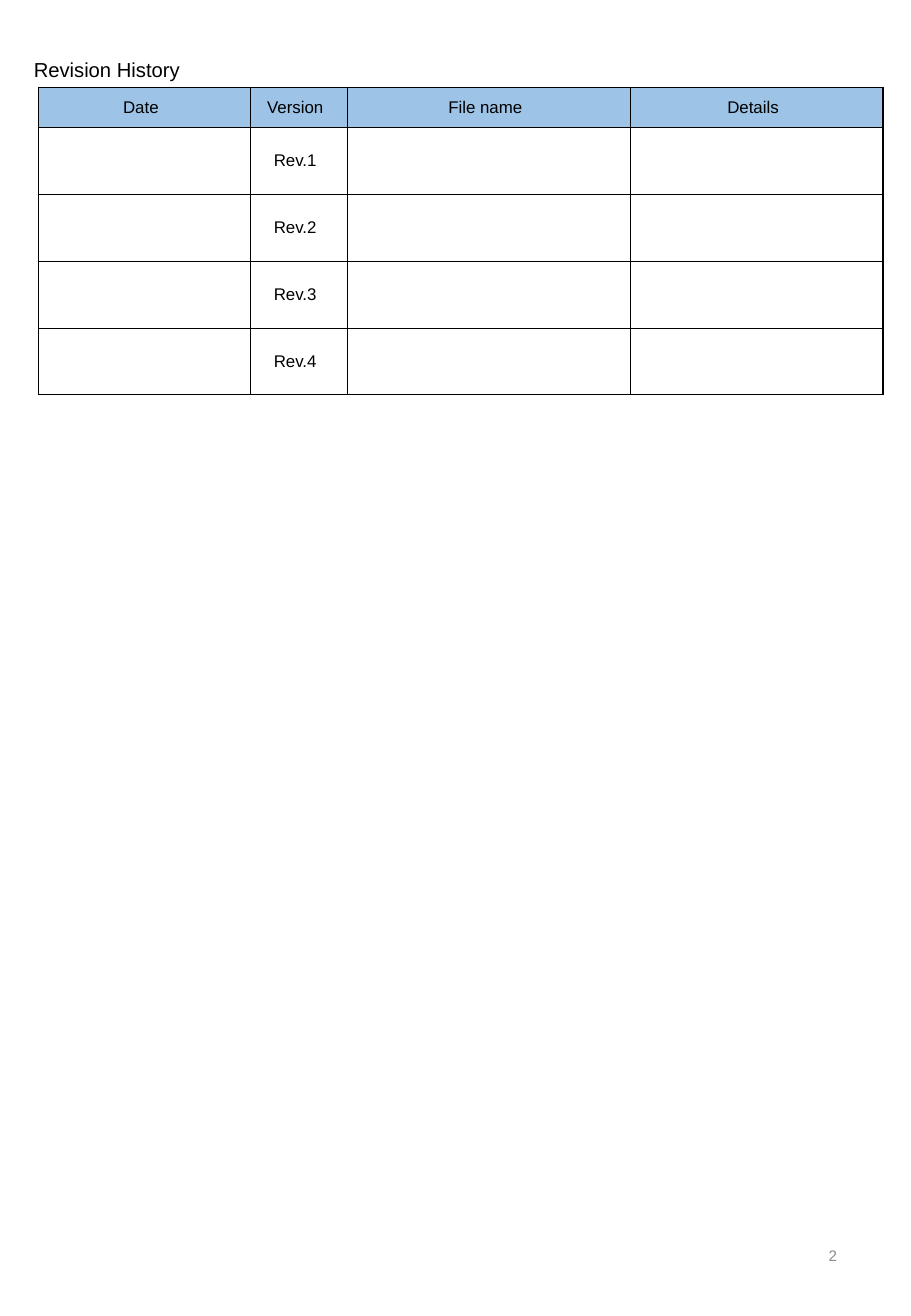
from lxml import etree
from pptx import Presentation
from pptx.dml.color import RGBColor
from pptx.enum.text import MSO_ANCHOR, MSO_AUTO_SIZE, PP_ALIGN
from pptx.oxml.ns import qn
from pptx.util import Inches, Pt

BLACK = RGBColor(0x00, 0x00, 0x00)
GRAY = RGBColor(0x8C, 0x8C, 0x8C)
HEADER_BLUE = RGBColor(0x9D, 0xC3, 0xE6)
LEFT, CENTER, RIGHT = PP_ALIGN.LEFT, PP_ALIGN.CENTER, PP_ALIGN.RIGHT
MIDDLE = MSO_ANCHOR.MIDDLE
GROW, FIXED = MSO_AUTO_SIZE.SHAPE_TO_FIT_TEXT, MSO_AUTO_SIZE.NONE

HEADERS = ["Date", "Version", "File name", "Details"]
COLUMN_WIDTHS = [1.74, 0.8, 2.33, 2.08]
HEADER_HEIGHT, REVISION_HEIGHT = 0.33, 0.55
REVISIONS = [["", f"Rev.{number}", "", ""] for number in range(1, 5)]


class RevisionPage:
    """Holds the text style and the current slide, and adds its elements."""

    def __init__(self, page, font="Arial"):
        self.page = page
        self.font = font

    def add_span(self, para, text, size, color, align):
        para.alignment = align
        span = para.add_run()
        span.text = text
        for name, value in {"name": self.font, "size": Pt(size)}.items():
            setattr(span.font, name, value)
        span.font.color.rgb = color

    def add_text(self, place, text, size, color, align=LEFT, fit=FIXED, indent=0):
        box = self.page.shapes.add_textbox(*map(Inches, place))
        frame = box.text_frame
        for name, value in {"word_wrap": True, "auto_size": fit, "vertical_anchor": MIDDLE}.items():
            setattr(frame, name, value)
        para = frame.paragraphs[0]
        self.add_span(para, text, size, color, align)
        if indent:
            para._p.get_or_add_pPr().set("indent", str(Inches(indent)))

    def add_borders(self, cell, color, width):
        properties = cell._tc.get_or_add_tcPr()
        for position, side in enumerate(("a:lnL", "a:lnR", "a:lnT", "a:lnB")):
            line = etree.Element(qn(side), w=str(Pt(width)))
            fill = etree.SubElement(line, qn("a:solidFill"))
            etree.SubElement(fill, qn("a:srgbClr"), val=str(color))
            properties.insert(position, line)

    def add_table(self, left, top, widths, heights, rows):
        place = map(Inches, (left, top, sum(widths), sum(heights)))
        table = self.page.shapes.add_table(len(rows), len(widths), *place).table
        for column, width in zip(table.columns, widths):
            column.width = Inches(width)
        for row, height in zip(table.rows, heights):
            row.height = Inches(height)
        margins = {"margin_left": 0.04, "margin_top": 0.05, "margin_right": 0.1, "margin_bottom": 0.05}
        for row_index, labels in enumerate(rows):
            for column_index, label in enumerate(labels):
                cell = table.cell(row_index, column_index)
                cell.vertical_anchor = MIDDLE
                for name, value in margins.items():
                    setattr(cell, name, Inches(value))
                if row_index == 0:
                    cell.fill.solid()
                    cell.fill.fore_color.rgb = HEADER_BLUE
                else:
                    cell.fill.background()
                self.add_borders(cell, BLACK, 0.75)
                if label:
                    self.add_span(cell.text_frame.paragraphs[0], label, 10, BLACK, CENTER)


def main():
    deck = Presentation()
    deck.slide_width, deck.slide_height = Inches(7.5), Inches(10.83)
    history = RevisionPage(deck.slides.add_slide(deck.slide_layouts[6]))
    history.add_text((0.12, 0.42, 1.56, 0.3), "Revision History", 12, BLACK, fit=GROW, indent=0.06)
    heights = [HEADER_HEIGHT] + [REVISION_HEIGHT] * len(REVISIONS)
    history.add_table(0.32, 0.72, COLUMN_WIDTHS, heights, [HEADERS] + REVISIONS)
    history.add_text((5.3, 10.04, 1.69, 0.58), "2", 9, GRAY, align=RIGHT)
    deck.save("out.pptx")


if __name__ == "__main__":
    main()
